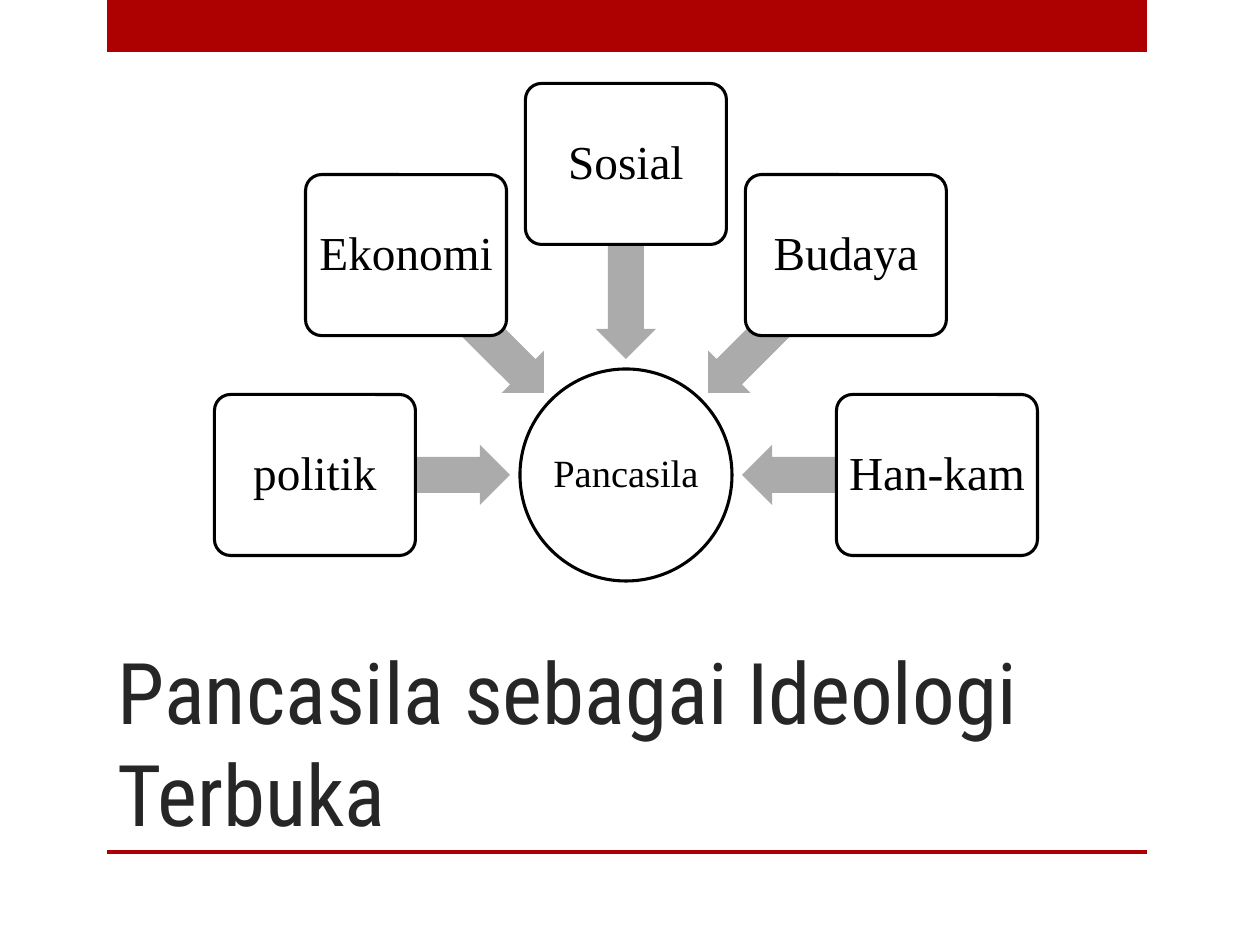
from math import cos, sin, radians
from pptx import Presentation
from pptx.dml.color import RGBColor
from pptx.enum.shapes import MSO_SHAPE as Kind
from pptx.enum.text import MSO_ANCHOR as Anchor, MSO_AUTO_SIZE as Fit, PP_ALIGN as Align
from pptx.util import Emu, Pt


def px(n):
    return Emu(round(n * 914400 / 126))


def color(fmt, value):
    fmt.rgb = RGBColor.from_string(value)


deck = Presentation()
deck.slide_width, deck.slide_height = px(1260), px(945)
slide = deck.slides.add_slide(deck.slide_layouts[5])


def draw(kind, x, y, w, h, fill, text="", size=27, pad=7):
    shape = slide.shapes.add_shape(kind, px(x), px(y), px(w), px(h))
    shape.shadow.inherit = False
    shape.fill.solid()
    color(shape.fill.fore_color, fill)
    if not text:
        shape.line.fill.background()
        return shape
    color(shape.line.color, "000000")
    shape.line.width = Pt(1.75)
    frame = shape.text_frame
    frame.word_wrap = True
    frame.vertical_anchor = Anchor.MIDDLE
    frame.margin_left = frame.margin_right = px(pad)
    frame.margin_top = frame.margin_bottom = px(pad)
    para = frame.paragraphs[0]
    para.text = text
    para.alignment = Align.CENTER
    para.line_spacing = 0.9
    para.font.name = "Times New Roman"
    para.font.size = Pt(size)
    color(para.font.color, "000000")
    return shape


for top, high in [(0, 52), (850, 4)]:
    draw(Kind.RECTANGLE, 107, top, 1040, high, "AD0101")

title = slide.shapes.title
title.left, title.top, title.width, title.height = px(105), px(630), px(935), px(220)
frame = title.text_frame
frame.word_wrap = True
frame.auto_size = Fit.NONE
frame.vertical_anchor = Anchor.BOTTOM
para = frame.paragraphs[0]
para.text = "Pancasila sebagai Ideologi Terbuka"
para.alignment = Align.LEFT
para.font.name = "Roboto Condensed"
para.font.size = Pt(48.6)
color(para.font.color, "262626")

mid_x, mid_y = 626, 475
hub = 212
box_w, box_h = 201, 161
arm_w, arm_h = 194, 60
draw(Kind.OVAL, mid_x - hub / 2, mid_y - hub / 2, hub, hub, "FFFFFF", "Pancasila", 22, 2)

for i, name in enumerate(["politik", "Ekonomi", "Sosial", "Budaya", "Han-kam"]):
    angle = 180 + 45 * i
    dx, dy = cos(radians(angle)), sin(radians(angle))
    arm = draw(Kind.LEFT_ARROW, mid_x + 213 * dx - arm_w / 2,
               mid_y + 213 * dy - arm_h / 2, arm_w, arm_h, "ABABAB")
    arm.rotation = angle % 360
    arm.adjustments[0] = 0.6
    arm.adjustments[1] = 0.5
    box = draw(Kind.ROUNDED_RECTANGLE, mid_x + 311 * dx - box_w / 2,
               mid_y + 311 * dy - box_h / 2, box_w, box_h, "FFFFFF", name)
    box.adjustments[0] = 0.1

deck.save("out.pptx")
